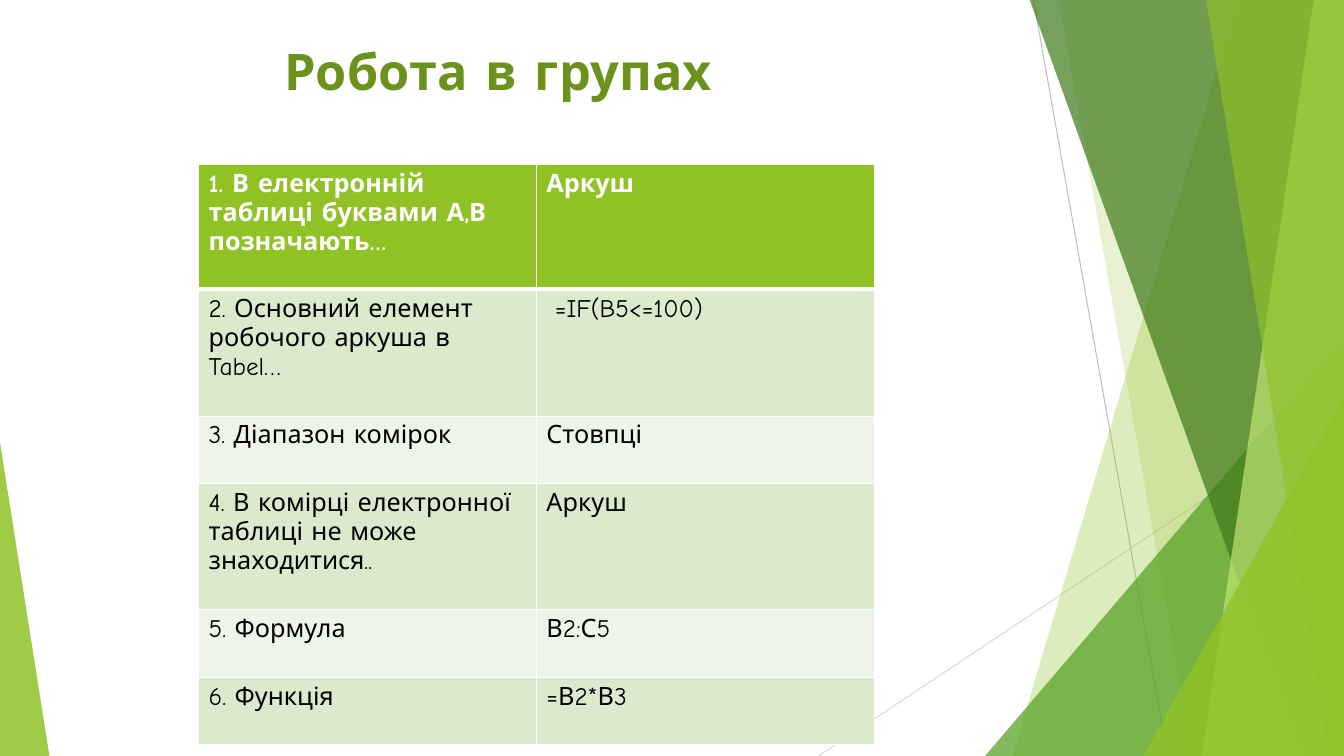
"""Builds the group work slide: faceted green backdrop, title and a two-column table."""
from lxml.etree import SubElement
from pptx import Presentation
from pptx.dml.color import RGBColor
from pptx.enum.shapes import MSO_CONNECTOR, MSO_SHAPE
from pptx.enum.text import PP_ALIGN
from pptx.oxml.ns import qn
from pptx.util import Inches, Pt

COLORS = {
    "green": "90C226", "leaf": "54A021", "forest": "3F7819", "lime": "C0E474",
    "title": "6C921D", "band_dark": "DBE9CD", "band_light": "EEF4E8",
    "white": "FFFFFF", "black": "000000", "gray": "BFBFBF", "pale_gray": "D9D9D9",
}
FONT = "Comic Neue"
TOP, BOTTOM, RIGHT = -0.01, 7.5, 13.33


def paint(facet, color, opacity):
    facet.shadow.inherit = False
    facet.line.fill.background()
    facet.fill.solid()
    facet.fill.fore_color.rgb = RGBColor.from_string(COLORS[color])
    tint = facet._element.spPr.find(qn("a:solidFill"))[0]
    SubElement(tint, qn("a:alpha")).set("val", str(opacity * 1000))


def write(paragraph, text, size, color, bold):
    run = paragraph.add_run()
    run.text = text
    run.font.name = FONT
    run.font.size = Pt(size)
    run.font.bold = bold
    run.font.color.rgb = RGBColor.from_string(COLORS[color])


prs = Presentation()
prs.slide_width, prs.slide_height = Inches(RIGHT), Inches(BOTTOM)
slide = prs.slides.add_slide(prs.slide_layouts[6])
shapes = slide.shapes

for x1, y1, x2, y2, color in [
    (10.25, 0, 11.58, BOTTOM, "gray"),
    (RIGHT, 4.03, 8.12, BOTTOM, "pale_gray"),
]:
    ray = shapes.add_connector(
        MSO_CONNECTOR.STRAIGHT, Inches(x1), Inches(y1), Inches(x2), Inches(y2))
    ray.line.width = Pt(0.75)
    ray.line.color.rgb = RGBColor.from_string(COLORS[color])
    SubElement(ray._element.spPr, qn("a:effectLst"))

BLADE, CORNER = "blade", "corner"
facets = [
    (BLADE, (12.28, 10.04), "green", 30),
    (BLADE, (10.5, 11.83), "green", 20),
    (CORNER, (9.77, 3.33, 3.56, 1), "leaf", 72),
    (BLADE, (10.21, 12.91), "forest", 70),
    (BLADE, (13.03, 11.92), "lime", 70),
    (BLADE, (11.96, 13.18), "green", 65),
    (CORNER, (11.34, 3.93, 1.99, 1), "green", 80),
    (CORNER, (0, 4.39, 0.49, 0), "green", 85),
]
for kind, place, color, opacity in facets:
    if kind == BLADE:
        top_x, bottom_x = place
        outline = shapes.build_freeform(Inches(top_x), Inches(TOP))
        outline.add_line_segments(
            [(Inches(x), Inches(y)) for x, y in
             [(RIGHT, TOP), (RIGHT, BOTTOM), (bottom_x, BOTTOM)]], close=True)
        facet = outline.convert_to_shape()
    else:
        left, top, width, apex = place
        facet = shapes.add_shape(
            MSO_SHAPE.ISOSCELES_TRIANGLE,
            Inches(left), Inches(top), Inches(width), Inches(BOTTOM - top))
        facet.adjustments[0] = apex
    paint(facet, color, opacity)

tasks = [
    ("1. В електронній таблиці буквами А,В позначають…", "Аркуш", 1.24),
    ("2. Основний елемент робочого аркуша в Tabel…", " =IF(B5<=100)", 1.26),
    ("3. Діапазон комірок", "Стовпці", 0.67),
    ("4. В комірці електронної таблиці не може знаходитися..", "Аркуш", 1.25),
    ("5. Формула", "В2:С5", 0.67),
    ("6. Функція", "=В2*В3", 0.67),
]
table = shapes.add_table(
    len(tasks), 2, Inches(1.97), Inches(1.63), Inches(6.7),
    Inches(sum(height for *_, height in tasks))).table
for column in table.columns:
    column.width = Inches(3.35)

for row, (question, answer, height) in enumerate(tasks):
    table.rows[row].height = Inches(height)
    header = row == 0
    band = "green" if header else "band_dark" if row % 2 else "band_light"
    for col, text in enumerate((question, answer)):
        cell = table.cell(row, col)
        write(cell.text_frame.paragraphs[0], text, 18,
              "white" if header else "black", header)
        properties = cell._tc.get_or_add_tcPr()
        for side in "LRTB":
            thick = (header and side == "B") or (row == 1 and side == "T")
            border = SubElement(properties, qn(f"a:ln{side}"))
            border.set("w", str(Pt(3 if thick else 1)))
            border_fill = SubElement(border, qn("a:solidFill"))
            SubElement(border_fill, qn("a:srgbClr")).set("val", COLORS["white"])
        cell.fill.solid()
        cell.fill.fore_color.rgb = RGBColor.from_string(COLORS[band])

title = shapes.add_textbox(Inches(1.57), Inches(0.35), Inches(6.74), Inches(0.71))
title.text_frame.word_wrap = True
heading = title.text_frame.paragraphs[0]
heading.alignment = PP_ALIGN.CENTER
write(heading, "Робота в групах", 36, "title", True)

prs.save("out.pptx")
